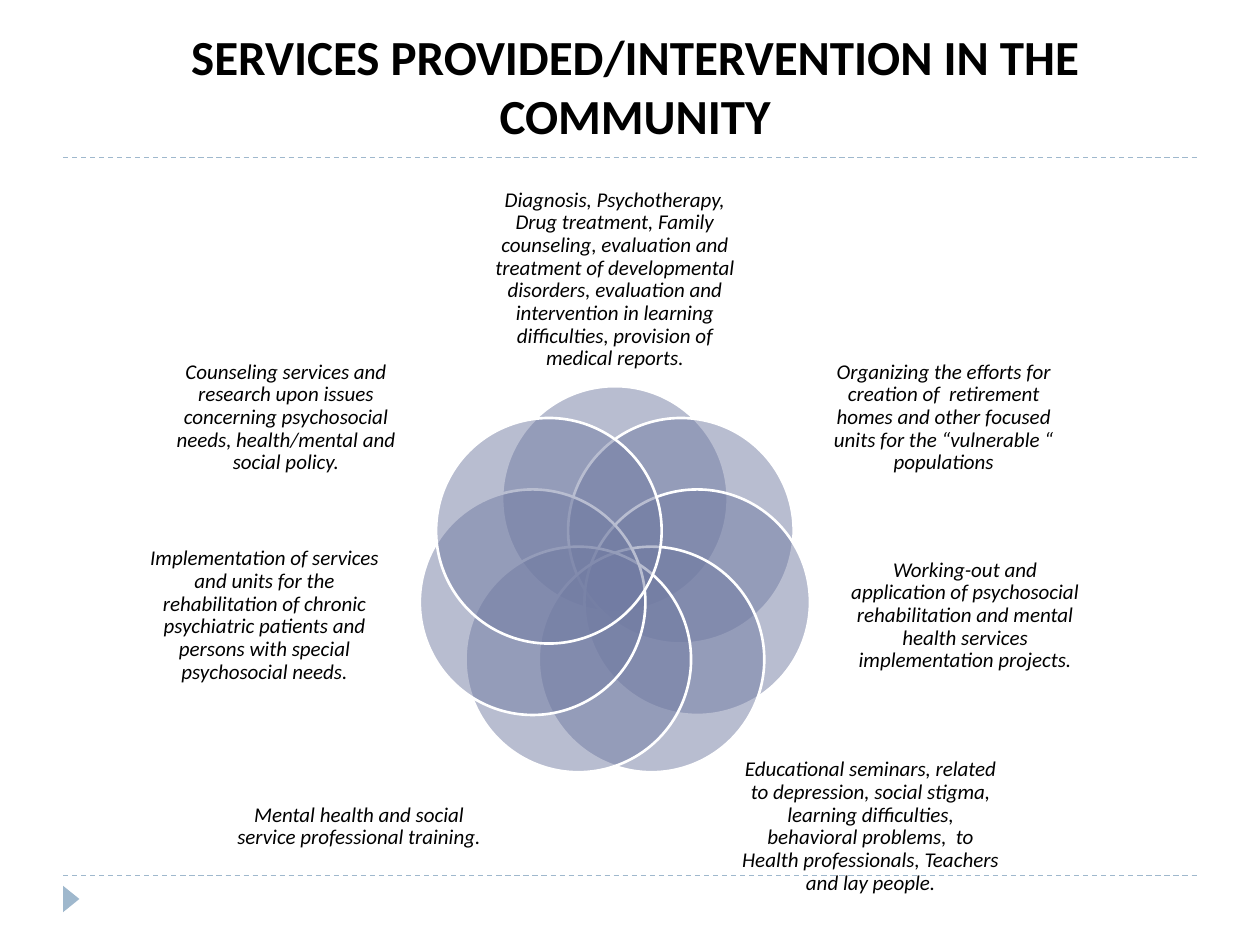
import math

from lxml import etree
from pptx import Presentation
from pptx.dml.color import RGBColor
from pptx.enum import dml, shapes, text
from pptx.oxml.ns import qn
from pptx.util import Inches, Pt

COLORS = {"ink": "000000", "petal": "727CA3", "edge": "FFFFFF", "rule": "9FB8CD"}
FONT = "Calibri"

MID_X, MID_Y = 4.88, 4.63   # centre of the flower
ORBIT, SIZE = 0.67, 1.79    # distance of petal centres, petal diameter

# Label boxes by row: centre offset from MID_X, top, width, height
ROWS = {
    "top": (0, 1.67, 2.05, 1.1),
    "high": (2.61, 2.71, 1.94, 1.21),
    "mid": (2.78, 4.24, 1.9, 1.29),
    "low": (2.03, 5.97, 2.05, 1.18),
}
# Clockwise from the top: row, side, wording
SERVICES = [
    ("top", 1, "Diagnosis, Psychotherapy, Drug treatment, Family counseling, "
     "evaluation and treatment of developmental disorders, evaluation and "
     "intervention in learning difficulties, provision of medical reports."),
    ("high", 1, "Organizing the efforts for creation of  retirement homes and "
     "other focused units for the “vulnerable “ populations"),
    ("mid", 1, "Working-out and application of psychosocial rehabilitation and "
     "mental health services implementation projects."),
    ("low", 1, "Educational seminars, related to depression, social stigma, "
     "learning difficulties, behavioral problems,  to Health professionals, "
     "Teachers and lay people."),
    ("low", -1, "Mental health and social service professional training."),
    ("mid", -1, "Implementation of services and units for the rehabilitation of "
     "chronic psychiatric patients and persons with special psychosocial needs."),
    ("high", -1, "Counseling services and research upon issues concerning "
     "psychosocial needs, health/mental and social policy."),
]


def color(name):
    return RGBColor.from_string(COLORS[name])


class Page:
    """Holds the style and the current slide."""

    def __init__(self, deck):
        self.slide = deck.slides.add_slide(deck.slide_layouts[5])
        self.shapes = self.slide.shapes

    def words(self, frame, content, size, bold=False, italic=False):
        """Fill a text frame with one centred paragraph and return it."""
        frame.word_wrap = True
        frame.vertical_anchor = text.MSO_ANCHOR.MIDDLE
        par = frame.paragraphs[0]
        par.text = content
        par.alignment = text.PP_ALIGN.CENTER
        font = par.font
        font.name, font.size = FONT, Pt(size)
        font.bold, font.italic = bold, italic
        font.color.rgb = color("ink")
        return par

    def title(self, content, left, top, width, height):
        box = self.shapes.title
        box.left, box.top = Inches(left), Inches(top)
        box.width, box.height = Inches(width), Inches(height)
        self.words(box.text_frame, content, 28, bold=True)

    def label(self, content, left, top, width, height):
        box = self.shapes.add_textbox(
            Inches(left), Inches(top), Inches(width), Inches(height))
        frame = box.text_frame
        frame.margin_left = frame.margin_right = 0
        frame.margin_top = frame.margin_bottom = 0
        self.words(frame, content, 12, italic=True).line_spacing = 0.9

    def rule(self, y):
        line = self.shapes.add_connector(
            shapes.MSO_CONNECTOR.STRAIGHT,
            Inches(0.5), Inches(y), Inches(9.5), Inches(y))
        line.line.color.rgb = color("rule")
        line.line.width = Pt(0.75)
        line.line.dash_style = dml.MSO_LINE.DASH
        etree.SubElement(line._element.spPr, qn("a:effectLst"))

    def solid(self, kind, left, top, width, height, fill):
        shape = self.shapes.add_shape(
            kind, Inches(left), Inches(top), Inches(width), Inches(height))
        shape.shadow.inherit = False
        shape.fill.solid()
        shape.fill.fore_color.rgb = color(fill)
        shape.line.fill.background()
        return shape

    def marker(self):
        mark = self.solid(shapes.MSO_SHAPE.ISOSCELES_TRIANGLE,
                          0.46, 7.07, 0.21, 0.13, "rule")
        mark.rotation = 90

    def petal(self, x, y):
        """Half-transparent circle centred on x, y."""
        disc = self.solid(shapes.MSO_SHAPE.OVAL,
                          x - SIZE / 2, y - SIZE / 2, SIZE, SIZE, "petal")
        tint = disc._element.spPr.find(qn("a:solidFill"))[0]
        etree.SubElement(tint, qn("a:alpha"), val="50000")
        disc.line.color.rgb = color("edge")
        disc.line.width = Pt(1.5)


def main():
    deck = Presentation()
    deck.slide_width, deck.slide_height = Inches(10), Inches(7.5)
    page = Page(deck)
    page.rule(6.95)
    page.rule(1.25)
    page.marker()
    for i, (row, side, content) in enumerate(SERVICES):
        turn = 2 * math.pi * i / len(SERVICES)
        page.petal(MID_X + ORBIT * math.sin(turn), MID_Y - ORBIT * math.cos(turn))
        shift, top, width, height = ROWS[row]
        page.label(content, MID_X + side * shift - width / 2, top, width, height)
    page.title("SERVICES PROVIDED/INTERVENTION IN THE COMMUNITY",
               0.47, 0.16, 9.14, 1.04)
    deck.save("out.pptx")


if __name__ == "__main__":
    main()
